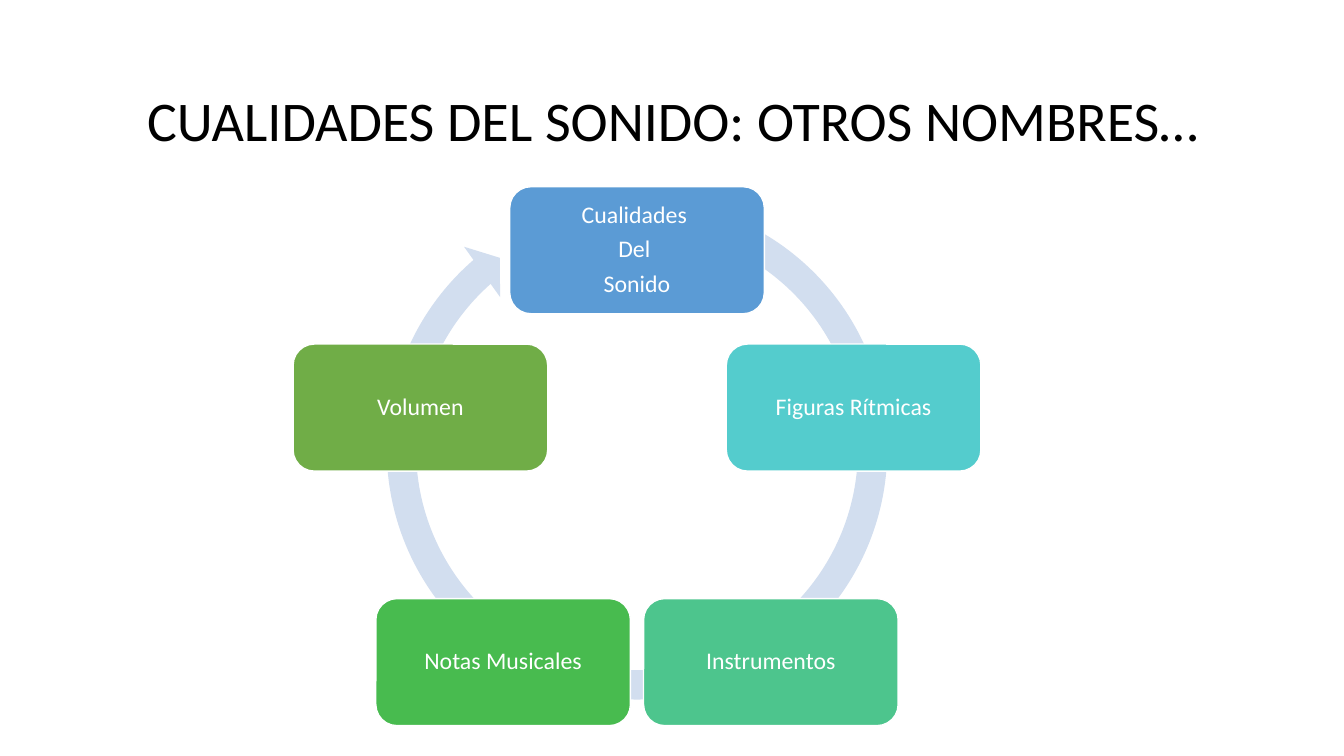
from math import cos, pi, sin

from pptx import Presentation
from pptx.dml.color import RGBColor
from pptx.enum.shapes import MSO_SHAPE
from pptx.enum.text import MSO_ANCHOR, PP_ALIGN
from pptx.util import Inches, Pt

SLIDE_W, SLIDE_H = 13.33, 7.5
FONT = "Calibri"
STEPS = [
    (["Cualidades ", "Del ", "Sonido"], "5B9BD5"),
    (["Figuras Rítmicas"], "54CCCD"),
    (["Instrumentos"], "4DC58D"),
    (["Notas Musicales"], "48BB4F"),
    (["Volumen"], "70AD47"),
]
RING_BENDS = [0.055, 3.307, 137.328, 174.123, 0.058]


def color(hex_value):
    """Turn a hex string into a colour."""
    return RGBColor.from_string(hex_value)


def apply(target, values):
    """Set every attribute in a dict of format values."""
    for attribute, value in values.items():
        setattr(target, attribute, value)


def write(frame, lines, size, ink, inset, gap=0):
    """Fill a text frame with centred lines."""
    margins = {f"margin_{side}": Inches(inset) for side in ("left", "top", "right", "bottom")}
    apply(frame, {"word_wrap": True, "vertical_anchor": MSO_ANCHOR.MIDDLE, **margins})
    for index, line in enumerate(lines):
        paragraph = frame.add_paragraph() if index else frame.paragraphs[0]
        apply(paragraph, {"alignment": PP_ALIGN.CENTER, "line_spacing": 0.9, "space_after": Pt(gap)})
        run = paragraph.add_run()
        run.text = line
        apply(run.font, {"size": Pt(size), "name": FONT})
        run.font.color.rgb = color(ink)


def add_centered(slide, preset, center_x, center_y, width, height, fill):
    """Draw a filled preset shape around a centre point."""
    box = (center_x - width / 2, center_y - height / 2, width, height)
    figure = slide.shapes.add_shape(preset, *map(Inches, box))
    figure.shadow.inherit = False
    figure.fill.solid()
    figure.fill.fore_color.rgb = color(fill)
    figure.line.fill.background()
    return figure


def add_title(slide, left, top, width, height):
    """Write the heading in its box."""
    heading = slide.shapes.add_textbox(*map(Inches, (left, top, width, height)))
    write(heading.text_frame, ["CUALIDADES DEL SONIDO: OTROS NOMBRES…"], 40, "000000", 0.1)


def add_cycle(slide, left, top, width, height):
    """Draw the ring arrow and the steps spaced evenly around it."""
    step_w, step_h = width * 0.37, height * 0.236
    radius = height * 0.423
    center_x, center_y = left + width / 2, top + step_h / 2 + radius
    ring_size = height * 0.99
    ring = add_centered(slide, MSO_SHAPE.CIRCULAR_ARROW, center_x, top + height * 0.488,
                        ring_size, ring_size, "D2DEEF")
    for index, bend in enumerate(RING_BENDS):
        ring.adjustments[index] = bend
    for index, (lines, fill) in enumerate(STEPS):
        angle = 2 * pi * index / len(STEPS)
        step = add_centered(slide, MSO_SHAPE.ROUNDED_RECTANGLE, center_x + radius * sin(angle),
                            center_y - radius * cos(angle), step_w, step_h, fill)
        step.line.color.rgb = color("FFFFFF")
        step.line.width = Pt(1)
        write(step.text_frame, lines, 17, "FFFFFF", 0.07, gap=6)


def main():
    """Build and save the slide."""
    deck = Presentation()
    apply(deck, {"slide_width": Inches(SLIDE_W), "slide_height": Inches(SLIDE_H)})
    slide = deck.slides.add_slide(deck.slide_layouts[6])
    add_title(slide, SLIDE_W * 0.069, SLIDE_H * 0.081, SLIDE_W * 0.863, SLIDE_H * 0.165)
    add_cycle(slide, SLIDE_W * 0.218, SLIDE_H * 0.247, SLIDE_W * 0.512, SLIDE_H * 0.712)
    deck.save("out.pptx")


if __name__ == "__main__":
    main()
